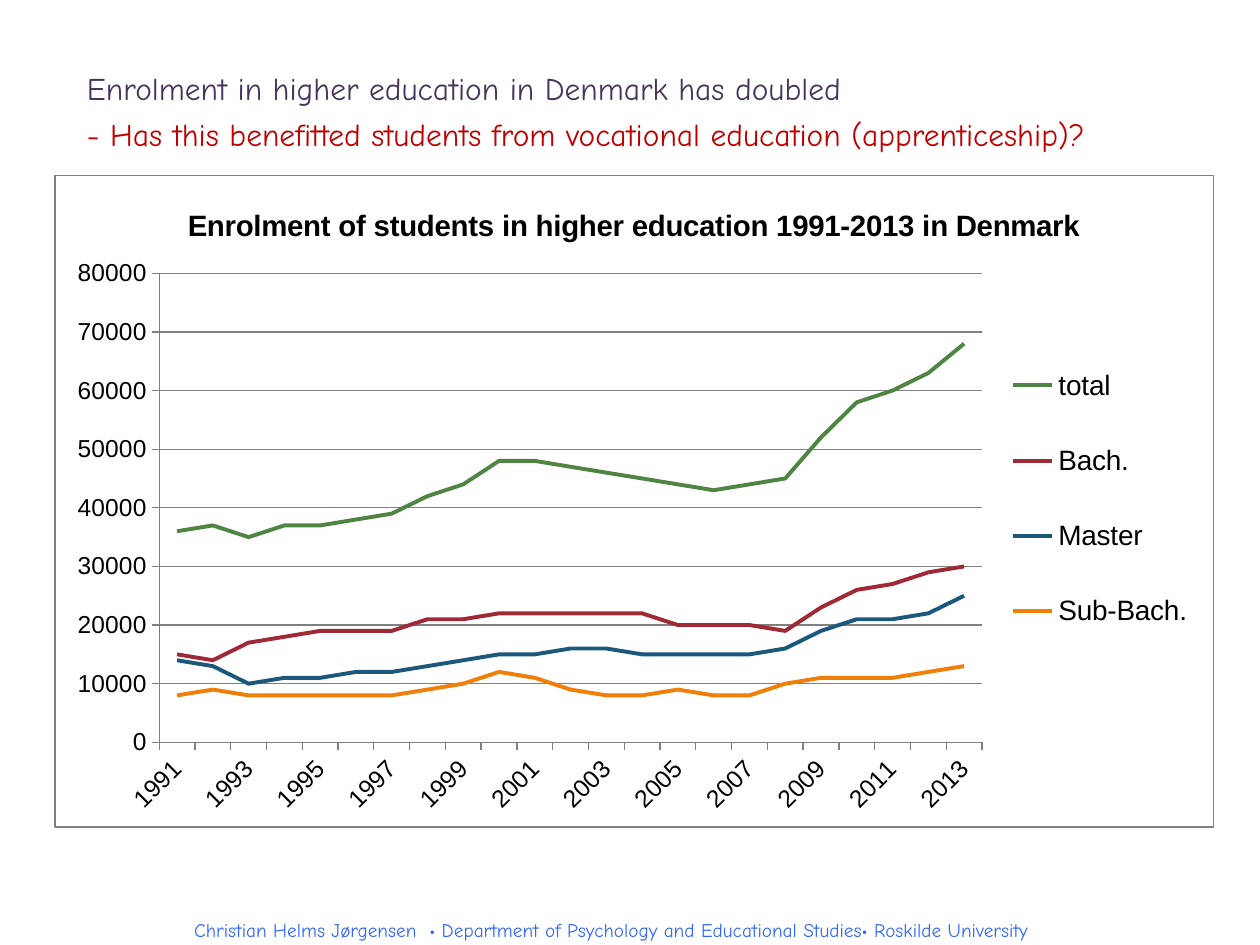
import pptx
import pptx.util
import pptx.oxml
import pptx.chart.data
import pptx.dml.color
import pptx.enum.chart
import pptx.enum.text
from pptx.oxml.ns import qn

Pt = pptx.util.Pt

# Content
HEADING = [
    ("Enrolment in higher education in Denmark has doubled", "48365A"),
    ("- Has this benefitted students from vocational education (apprenticeship)?", "C00000"),
]
FOOTER = ("Christian Helms Jørgensen  • Department of Psychology and Educational Studies"
          "• Roskilde University")
CHART_TITLE = "Enrolment of students in higher education 1991-2013 in Denmark "
YEARS = [str(year) for year in range(1991, 2014)]
SERIES = [  # name, colour, thousands of students per year
    ("total ", "4E8542", [36, 37, 35, 37, 37, 38, 39, 42, 44, 48, 48, 47, 46, 45, 44, 43,
                          44, 45, 52, 58, 60, 63, 68]),
    ("Bach.", "9F2936", [15, 14, 17, 18, 19, 19, 19, 21, 21, 22, 22, 22, 22, 22, 20, 20,
                         20, 19, 23, 26, 27, 29, 30]),
    ("Master ", "1B587C", [14, 13, 10, 11, 11, 12, 12, 13, 14, 15, 15, 16, 16, 15, 15, 15,
                           15, 16, 19, 21, 21, 22, 25]),
    ("Sub-Bach. ", "F07F09", [8, 9, 8, 8, 8, 8, 8, 9, 10, 12, 11, 9, 8, 8, 9, 8,
                              8, 10, 11, 11, 11, 12, 13]),
]
GREY = "808080"
NS = ('xmlns:c="http://schemas.openxmlformats.org/drawingml/2006/chart" '
      'xmlns:a="http://schemas.openxmlformats.org/drawingml/2006/main"')


def rgb(value):
    return pptx.dml.color.RGBColor.from_string(value)


def style_font(font, name, size, color, bold=False):
    font.name, font.size, font.bold = name, Pt(size), bold
    font.color.rgb = rgb(color)


def style_line(line, color, width):
    line.color.rgb = rgb(color)
    line.width = Pt(width)


def place(element, index, target="", **parts):
    """Set a manual layout, in fractions of the chart."""
    for old in element.findall(qn("c:layout")):
        element.remove(old)
    modes = "".join(f'<c:{k}Mode val="edge"/>' for k in parts if k in "xy")
    sizes = "".join(f'<c:{k} val="{v}"/>' for k, v in parts.items())
    element.insert(index, pptx.oxml.parse_xml(
        f"<c:layout {NS}><c:manualLayout>{target}{modes}{sizes}"
        "</c:manualLayout></c:layout>"))


prs = pptx.Presentation()
prs.slide_width, prs.slide_height = Pt(720), Pt(540)
s = prs.slides.add_slide(prs.slide_layouts[5])

# Heading
title = s.shapes.title
title.left, title.top, title.width, title.height = Pt(42.5), Pt(31.7), Pt(652), Pt(60)
tf = title.text_frame
tf.text = "\n".join(text for text, _ in HEADING)
tf.word_wrap = True
tf.auto_size = pptx.enum.text.MSO_AUTO_SIZE.NONE
tf.vertical_anchor = pptx.enum.text.MSO_ANCHOR.TOP
for p, (_, color) in zip(tf.paragraphs, HEADING):
    p.alignment = pptx.enum.text.PP_ALIGN.LEFT
    p.line_spacing = Pt(26)
    p.space_before = Pt(0)
    style_font(p.runs[0].font, "Comic Neue", 18, color)

# Footer
tf = s.shapes.add_textbox(Pt(16.5), Pt(521.3), Pt(666), Pt(18.7)).text_frame
tf.word_wrap = True
tf.text = FOOTER
p = tf.paragraphs[0]
p.alignment = pptx.enum.text.PP_ALIGN.CENTER
style_font(p.runs[0].font, "Comic Neue", 11, "3366FF")

# Chart data
data = pptx.chart.data.CategoryChartData(number_format="0")
data.categories = YEARS
for name, _, thousands in SERIES:
    data.add_series(name, [n * 1000 for n in thousands])
chart = s.shapes.add_chart(pptx.enum.chart.XL_CHART_TYPE.LINE,
                           Pt(31), Pt(100), Pt(663), Pt(373), data).chart
style_font(chart.font, "Arial", 14, "000000")
chart.plots[0].vary_by_categories = False
for series, (_, color, _) in zip(chart.series, SERIES):
    series.smooth = False
    series.marker.style = pptx.enum.chart.XL_MARKER_STYLE.NONE
    style_line(series.format.line, color, 2.25)

# Chart title and legend
chart.has_title = True
tf = chart.chart_title.text_frame
tf.text = CHART_TITLE
style_font(tf.paragraphs[0].runs[0].font, "Arial", 16.8, "000000", bold=True)
chart.has_legend = True
chart.legend.position = pptx.enum.chart.XL_LEGEND_POSITION.RIGHT
chart.legend.include_in_layout = False
style_font(chart.legend.font, "Arial", 16, "000000")

# Axes
years, students = chart.category_axis, chart.value_axis
for axis in (years, students):
    axis.major_tick_mark = pptx.enum.chart.XL_TICK_MARK.OUTSIDE
    axis.minor_tick_mark = pptx.enum.chart.XL_TICK_MARK.NONE
    style_font(axis.tick_labels.font, "Arial", 14, "000000")
    style_line(axis.format.line, GREY, 0.75)
students.minimum_scale, students.maximum_scale, students.major_unit = 0, 80000, 10000
style_line(students.major_gridlines.format.line, GREY, 0.75)
cat_ax = chart._chartSpace.find(".//" + qn("c:catAx"))
cat_ax.find(qn("c:txPr")).find(qn("a:bodyPr")).set("rot", "-2700000")
cat_ax.find(qn("c:noMultiLvlLbl")).addprevious(
    pptx.oxml.parse_xml(f'<c:tickLblSkip {NS} val="2"/>'))

# Places inside the chart, and its border
root = chart._chartSpace
place(root.find(".//" + qn("c:plotArea")), 0, '<c:layoutTarget val="inner"/>',
      x=0.09, y=0.15, w=0.71, h=0.72)
place(root.find(".//" + qn("c:legend")), 1, x=0.82, y=0.23, w=0.17, h=0.53)
place(root.find(".//" + qn("c:title")), 1, x=0.11, y=0.04)
root.find(qn("c:txPr")).addprevious(pptx.oxml.parse_xml(
    f'<c:spPr {NS}><a:noFill/><a:ln w="{Pt(0.75)}"><a:solidFill>'
    f'<a:srgbClr val="{GREY}"/></a:solidFill></a:ln></c:spPr>'))

prs.save("out.pptx")
